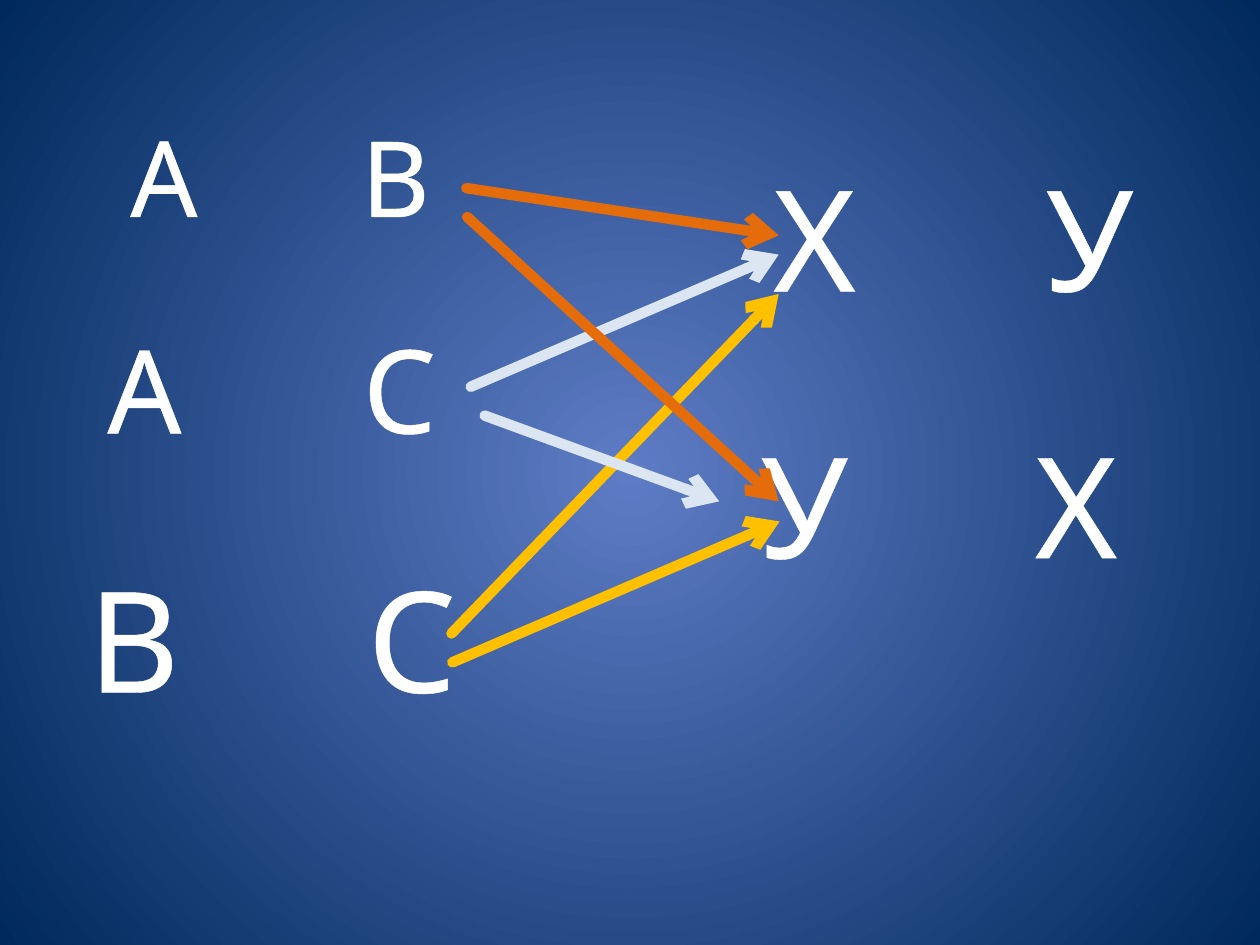
from dataclasses import dataclass

from lxml.etree import SubElement
from pptx import Presentation
from pptx.dml.color import RGBColor as Rgb
from pptx.enum.shapes import MSO_CONNECTOR as Connector
from pptx.enum.text import MSO_ANCHOR as Anchor, PP_ALIGN as Align
from pptx.oxml import parse_xml
from pptx.oxml.ns import nsdecls, qn
from pptx.util import Pt


@dataclass(frozen=True)
class Theme:
    font: str = "Cabin"
    text: str = "FFFFFF"
    glow: str = "5E7CC5"
    edge: str = "00295C"
    pale: str = "DCE6F2"
    orange: str = "E46C0A"
    yellow: str = "FFC000"
    small: int = 60
    medium: int = 66
    large: int = 80
    text_outline: float = 1.45
    arrow_width: int = 6


class SlideBuilder:
    def __init__(self, slide, theme):
        self.slide = slide
        self.theme = theme

    def background(self):
        """Fill the slide with a gradient that spreads from its centre."""
        fill = self.slide.background.fill
        fill.gradient()
        for stop, color in zip(fill.gradient_stops, (self.theme.glow, self.theme.edge)):
            stop.color.rgb = Rgb.from_string(color)
        gradient = self.slide.element.find(".//" + qn("a:gradFill"))
        gradient.replace(gradient.find(qn("a:lin")), parse_xml(
            f'<a:path {nsdecls("a")} path="circle">'
            '<a:fillToRect l="50000" t="50000" r="50000" b="50000"/></a:path>'))

    def letter_pair(self, letters, frame, starts, size):
        """Set two letters in one box, each beginning at its own x in starts."""
        left, top, width, height = frame
        first, second = starts
        box = self.slide.shapes.add_textbox(Pt(left), Pt(top), Pt(width), Pt(height))
        text = box.text_frame
        text.word_wrap = True
        text.vertical_anchor = Anchor.MIDDLE
        text.margin_left = Pt(first - left)
        text.margin_right = 0
        para = text.paragraphs[0]
        para.text = "\t".join(letters)
        para.alignment = Align.LEFT
        para.font.name = self.theme.font
        para.font.size = Pt(size)
        para.font.color.rgb = Rgb.from_string(self.theme.text)

        properties = para._p.get_or_add_pPr()
        properties.find(qn("a:defRPr")).insert(0, parse_xml(
            f'<a:ln {nsdecls("a")} w="{Pt(self.theme.text_outline)}"><a:solidFill>'
            f'<a:srgbClr val="{self.theme.text}"/></a:solidFill></a:ln>'))
        properties.insert(0, parse_xml(
            f'<a:tabLst {nsdecls("a")}><a:tab pos="{Pt(second - first)}" algn="l"/></a:tabLst>'))

    def arrow(self, start, end, color):
        arrow = self.slide.shapes.add_connector(
            Connector.STRAIGHT, *(Pt(length) for length in (*start, *end)))
        arrow.line.color.rgb = Rgb.from_string(color)
        arrow.line.width = Pt(self.theme.arrow_width)
        line = arrow.line._get_or_add_ln()
        line.set("cap", "rnd")
        SubElement(line, qn("a:tailEnd"), type="arrow")
        SubElement(arrow._element.spPr, qn("a:effectLst"))


def main():
    theme = Theme()
    deck = Presentation()
    deck.slide_width, deck.slide_height = Pt(720), Pt(540)
    blank_layout = deck.slide_layouts[6]
    builder = SlideBuilder(deck.slides.add_slide(blank_layout), theme)
    builder.background()

    letter_pairs = (
        ("АВ", (54, 49, 212.5, 102), (74.5, 206.5), theme.small),
        ("ХУ", (417, 77, 255, 115), (442, 597.5), theme.large),
        ("АС", (34, 179.5, 244, 83.5), (61.5, 207.5), theme.medium),
        ("ВС", (42.5, 315.5, 227, 96.5), (50.5, 210), theme.large),
        ("УХ", (417, 230.5, 238.5, 113), (434.5, 591.5), theme.large),
    )
    for pair in letter_pairs:
        builder.letter_pair(*pair)

    arrows = (
        ((269, 221), (445, 145.5), theme.pale),
        ((266.5, 107.5), (445, 134.5), theme.orange),
        ((258, 362), (445, 168), theme.yellow),
        ((267, 124), (445, 286.5), theme.orange),
        ((258.5, 378.5), (445.5, 298), theme.yellow),
        ((277, 237.5), (411, 286.5), theme.pale),
    )
    for arrow in arrows:
        builder.arrow(*arrow)

    deck.save("out.pptx")


if __name__ == "__main__":
    main()
